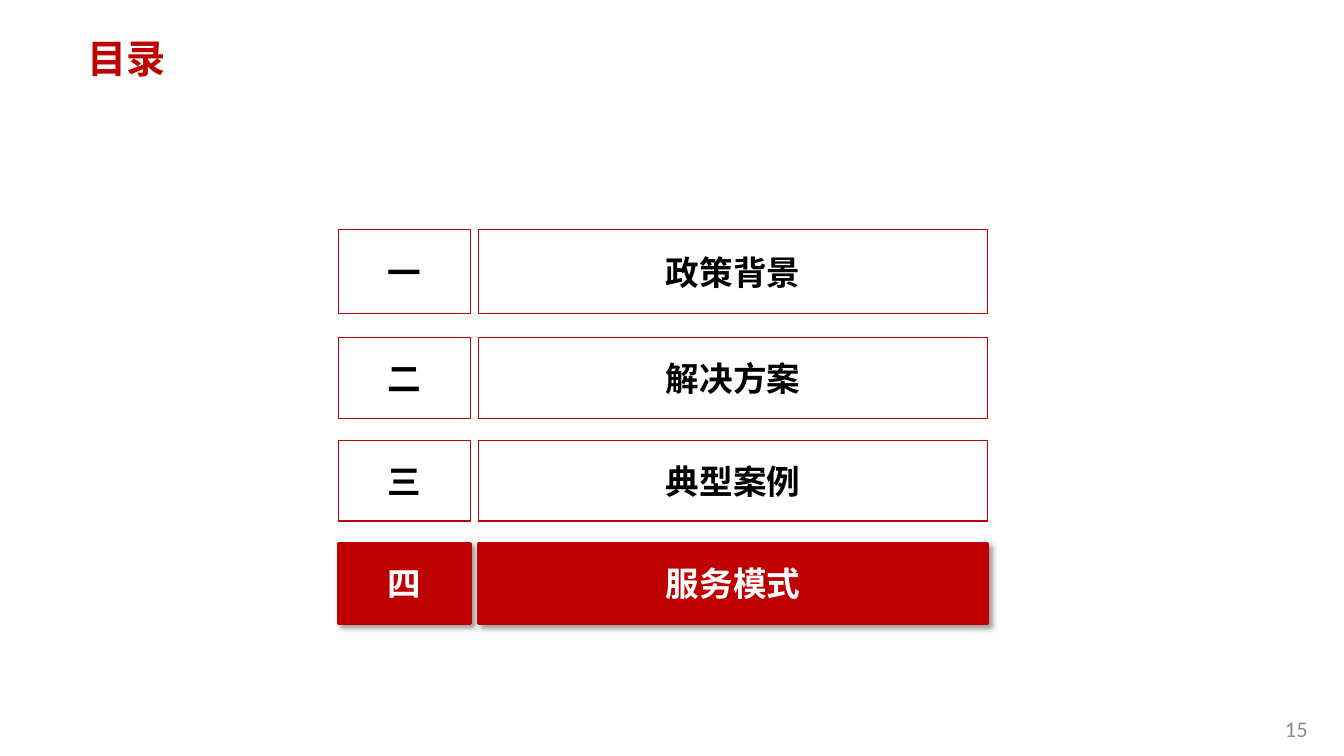
from lxml import etree
from pptx import Presentation
from pptx.dml.color import RGBColor
from pptx.enum import shapes, text
from pptx.oxml.ns import qn
from pptx.util import Pt

TITLE = "目录"
PAGE = "15"
# number, heading, top, height, current section
SECTIONS = [
    ("一", "政策背景", 164.2, 59.8, False),
    ("二", "解决方案", 241.2, 57.6, False),
    ("三", "典型案例", 314.6, 57.6, False),
    ("四", "服务模式", 388, 57.6, True),
]
COLUMNS = [(241.9, 94.3), (342, 363.4)]  # left, width
COLORS = {"red": "C00000", "black": "000000", "white": "FFFFFF", "gray": "8C8C8C"}
CJK = "Noto Sans CJK SC"


def color(name):
    return RGBColor.from_string(COLORS[name])


def add_run(p, words, size, fill, face=CJK, bold=True):
    r = p.add_run()
    r.text = words
    r.font.size = Pt(size)
    r.font.bold = bold
    r.font.color.rgb = color(fill)
    r.font.name = face
    etree.SubElement(r.font._element, qn("a:ea"), typeface=face)


def add_shadow(sp):
    effects = sp._element.spPr.find(qn("a:effectLst"))
    outer = etree.SubElement(effects, qn("a:outerShdw"), blurRad=str(Pt(4)),
                             dist=str(Pt(3)), dir="2700000", algn="tl", rotWithShape="0")
    clr = etree.SubElement(outer, qn("a:srgbClr"), val=COLORS["black"])
    etree.SubElement(clr, qn("a:alpha"), val="40000")


def add_box(slide, words, left, top, width, height, current):
    sp = slide.shapes.add_shape(shapes.MSO_SHAPE.RECTANGLE,
                                Pt(left), Pt(top), Pt(width), Pt(height))
    if current:
        sp.fill.solid()
        sp.fill.fore_color.rgb = color("red")
    else:
        sp.fill.background()
    sp.line.color.rgb = color("red")
    sp.line.width = Pt(2 if current else 0.75)
    sp.shadow.inherit = False
    if current:
        add_shadow(sp)
    tf = sp.text_frame
    tf.margin_left = tf.margin_right = tf.margin_top = tf.margin_bottom = 0
    tf.vertical_anchor = text.MSO_ANCHOR.MIDDLE
    p = tf.paragraphs[0]
    p.alignment = text.PP_ALIGN.CENTER
    add_run(p, words, 24, "white" if current else "black")


def main():
    prs = Presentation()
    prs.slide_width, prs.slide_height = Pt(960), Pt(540)
    slide = prs.slides.add_slide(prs.slide_layouts[5])

    title = slide.shapes.title
    title.left, title.top, title.width, title.height = Pt(55.4), Pt(24.5), Pt(812.2), Pt(51.8)
    tf = title.text_frame
    tf.vertical_anchor = text.MSO_ANCHOR.TOP
    tf.auto_size = text.MSO_AUTO_SIZE.NONE
    p = tf.paragraphs[0]
    p.alignment = text.PP_ALIGN.LEFT
    p.line_spacing = 0.9
    add_run(p, TITLE, 28, "red")

    for number, heading, top, height, current in SECTIONS:
        for words, (left, width) in zip((number, heading), COLUMNS):
            add_box(slide, words, left, top, width, height, current)

    page = slide.shapes.add_textbox(Pt(910.8), Pt(507.6), Pt(33.1), Pt(26.6))
    page.text_frame.word_wrap = False
    add_run(page.text_frame.paragraphs[0], PAGE, 16, "gray", "Calibri", False)

    prs.save("out.pptx")


if __name__ == "__main__":
    main()
